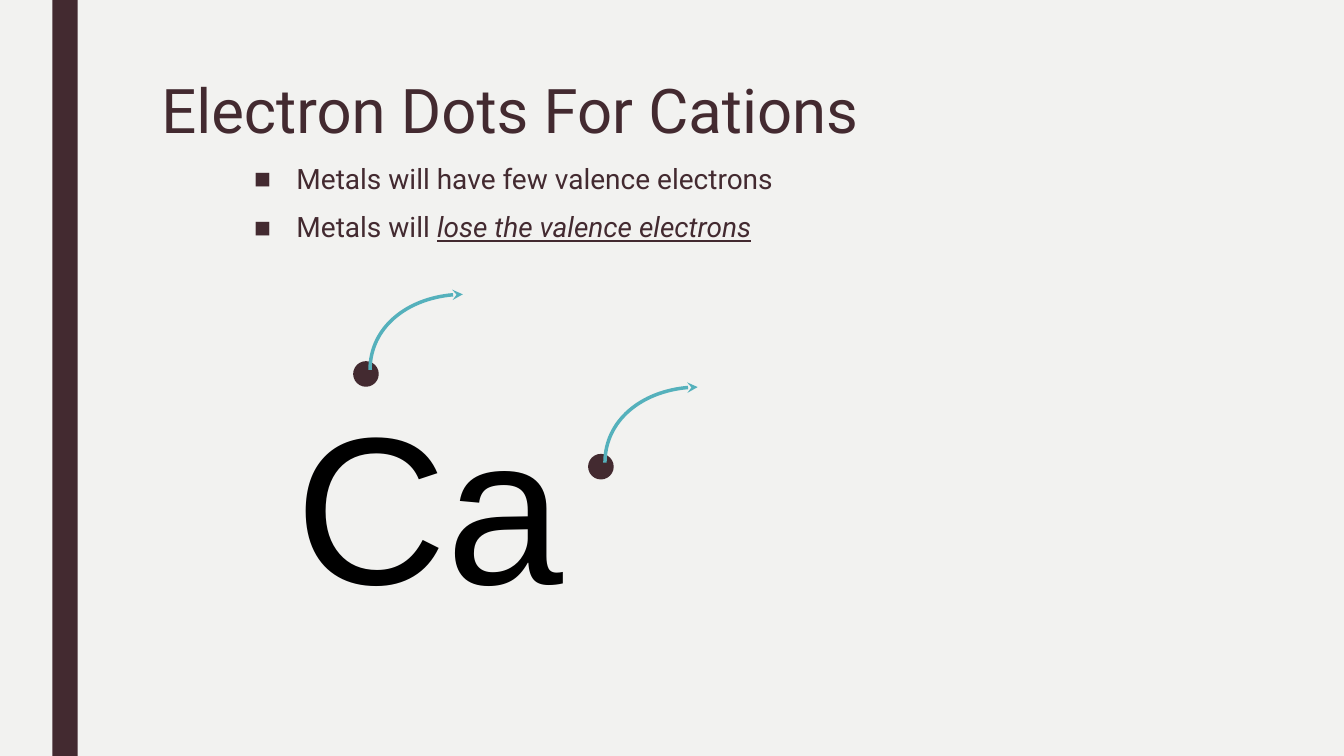
from lxml.etree import SubElement
from pptx import Presentation
from pptx.dml.color import RGBColor
from pptx.enum.shapes import MSO_SHAPE as Preset
from pptx.enum.text import MSO_ANCHOR as Anchor, MSO_AUTO_SIZE as AutoSize, PP_ALIGN as Align
from pptx.oxml.ns import qn
from pptx.util import Inches, Pt

PLUM = "432A30"
TEAL = "55B1BC"
PAPER = "F2F2F0"
BLACK = "000000"


def paint(target, color):
    target.solid()
    target.fore_color.rgb = RGBColor.from_string(color)


def write(para, text, font="Roboto", size=20, color=PLUM, italic=False, underline=False):
    span = para.add_run()
    span.text = text
    span.font.name = font
    span.font.size = Pt(size)
    span.font.italic = italic
    span.font.underline = underline
    paint(span.font.fill, color)


class SlideBuilder:
    def __init__(self, page):
        self.page = page
        paint(page.background.fill, PAPER)

    def place(self, box, left, top, width, height, anchor=Anchor.TOP):
        box.left, box.top = Inches(left), Inches(top)
        box.width, box.height = Inches(width), Inches(height)
        frame = box.text_frame
        frame.word_wrap = True
        frame.auto_size = AutoSize.NONE
        frame.vertical_anchor = anchor
        return frame

    def shape(self, preset, left, top, width, height, color, line_width=0):
        shape = self.page.shapes.add_shape(
            preset, Inches(left), Inches(top), Inches(width), Inches(height))
        shape.shadow.inherit = False
        paint(shape.fill, color)
        if line_width:
            paint(shape.line.fill, color)
            shape.line.width = Pt(line_width)
        else:
            shape.line.fill.background()

    def title(self, text, *area):
        para = self.place(self.page.shapes.title, *area).paragraphs[0]
        para.alignment = Align.LEFT
        para.line_spacing = 0.89
        write(para, text, size=44)

    def bullets(self, items, *area):
        frame = self.place(self.page.placeholders[1], *area)
        for index, spans in enumerate(items):
            para = frame.add_paragraph() if index else frame.paragraphs[0]
            para.line_spacing = 0.94
            para.space_before, para.space_after = Pt(10), Pt(2)
            properties = para._p.get_or_add_pPr()
            properties.set("marL", str(Inches(0.42)))
            properties.set("indent", str(Inches(-0.42)))
            SubElement(properties, qn("a:buFont"), typeface="Arial")
            SubElement(properties, qn("a:buChar"), char="■")
            for text, style in spans:
                write(para, text, **style)

    def symbol(self, text, *area):
        box = self.page.shapes.add_textbox(0, 0, 0, 0)
        frame = self.place(box, *area, anchor=Anchor.BOTTOM)
        frame.margin_bottom = Inches(0.08)
        write(frame.paragraphs[0], text, font="Arial", size=150, color=BLACK)

    def curved_arrow(self, left, top, width, height):
        right, bottom = left + width, top + height
        builder = self.page.shapes.build_freeform(Inches(left), Inches(bottom))
        builder.add_line_segments([(Inches(right), Inches(top))], close=False)
        arrow = builder.convert_to_shape()
        arrow.shadow.inherit = False
        arrow.fill.background()
        paint(arrow.line.fill, TEAL)
        arrow.line.width = Pt(2.5)
        SubElement(arrow.line._get_or_add_ln(), qn("a:tailEnd"), type="stealth")
        outline = next(arrow._element.iter(qn("a:path")))
        outline.remove(outline.find(qn("a:lnTo")))
        curve = SubElement(outline, qn("a:cubicBezTo"))
        for across, down in ((0, 0.44), (0.45, 0), (1, 0)):
            SubElement(curve, qn("a:pt"), x=str(Inches(width * across)),
                       y=str(Inches(height * down)))


def main():
    deck = Presentation()
    deck.slide_width, deck.slide_height = Inches(13.33), Inches(7.5)
    slide = SlideBuilder(deck.slides.add_slide(deck.slide_layouts[1]))
    slide.shape(Preset.RECTANGLE, 0.52, 0, 0.25, 7.5, PLUM)
    slide.title("Electron Dots For Cations", 1.5, 0.75, 10.5, 1.62)
    slide.bullets([
        [("Metals will have few valence electrons", {})],
        [("Metals will ", {}),
         ("lose the valence electrons", {"italic": True, "underline": True})],
    ], 2.42, 1.58, 8.58, 2)
    slide.symbol("Ca", 2.83, 3.67, 2.92, 2.63)
    electrons = [(3.51, 3.59), (5.84, 4.51)]
    for left, top in electrons:
        slide.shape(Preset.OVAL, left, top, 0.24, 0.24, PLUM, line_width=1)
    for left, top in electrons:
        slide.curved_arrow(left + 0.16, top - 0.67, 0.92, 0.75)
    deck.save("out.pptx")


if __name__ == "__main__":
    main()
